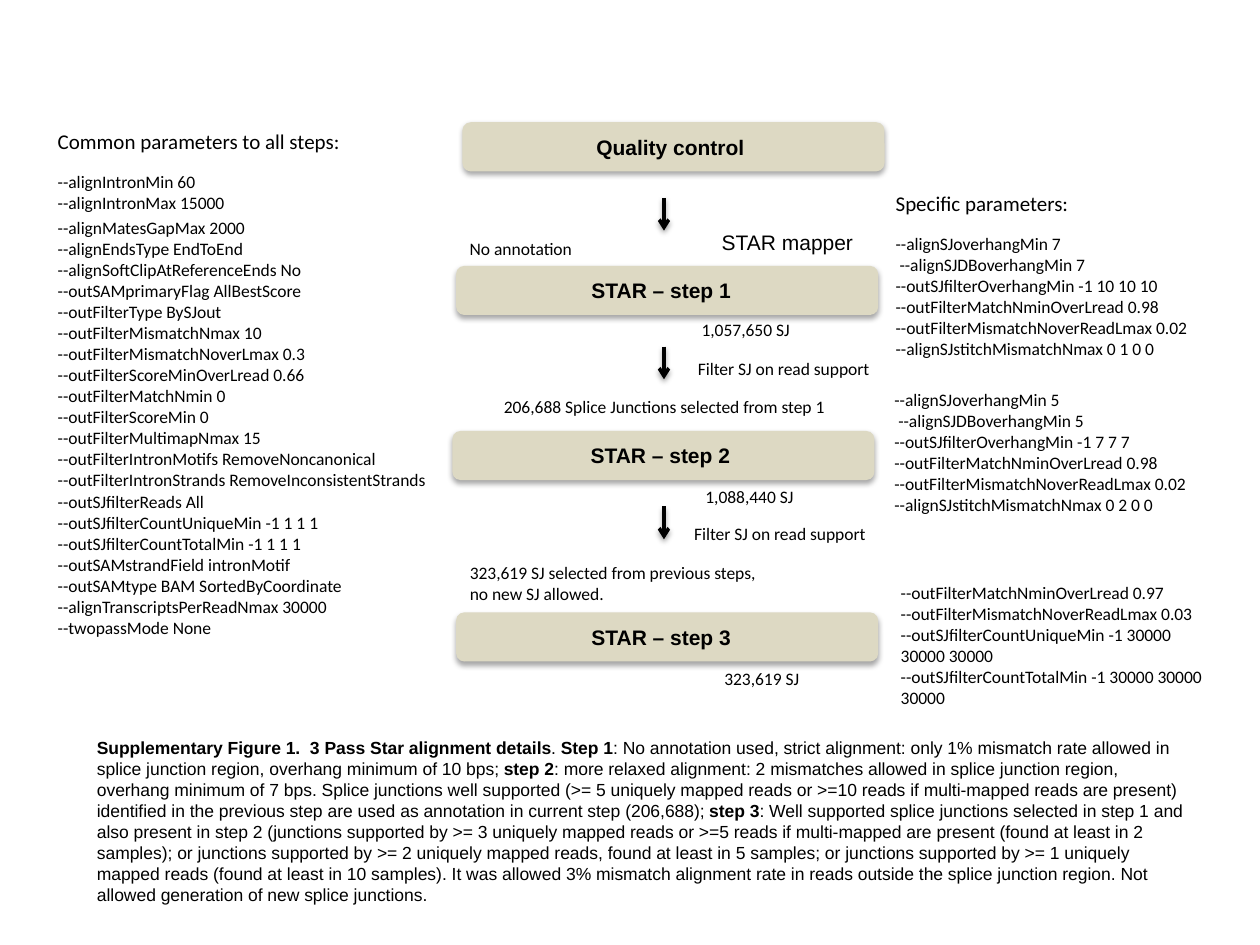
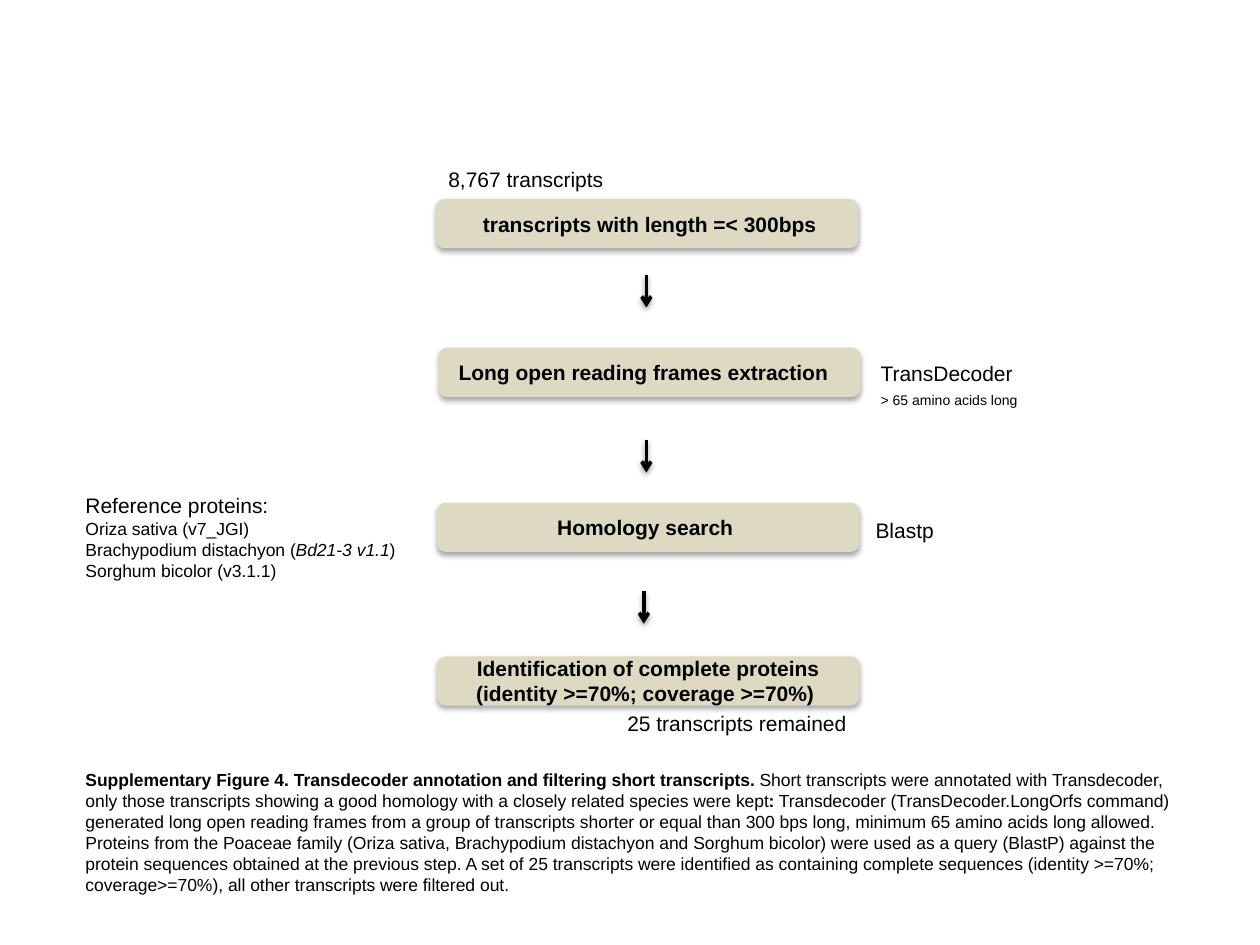
from dataclasses import dataclass, field
from typing import Any

from lxml import etree
from pptx import Presentation
from pptx.dml.color import RGBColor
from pptx.enum.shapes import MSO_CONNECTOR, MSO_SHAPE
from pptx.enum.text import MSO_ANCHOR, MSO_AUTO_SIZE, PP_ALIGN
from pptx.oxml.ns import qn
from pptx.util import Inches, Pt

ROUNDED, STRAIGHT = MSO_SHAPE.ROUNDED_RECTANGLE, MSO_CONNECTOR.STRAIGHT
MIDDLE, CENTER = MSO_ANCHOR.MIDDLE, PP_ALIGN.CENTER
GROW = MSO_AUTO_SIZE.SHAPE_TO_FIT_TEXT

COLORS = {"step": "DDD9C3", "ink": "000000"}
SANS, PARAM_FONT = "Arial", "Calibri"

# Grid of 100 columns by 75 rows, in tenths of an inch
COLUMNS, ROWS, CELL = 100, 75, 0.1
STEP_W, STEP_H, ARROW_H = 33.5, 3.9, 2.6
CAPTION_W = 88.5
SPACE = 3.33  # width of one bold 12 pt space, in points
HEAD_GAP = 9.8  # space between a parameter heading and its list


@dataclass
class Step:
    col: float
    row: float
    text: str
    nudge: float = 0  # shifts the centred text left, in spaces


@dataclass
class Arrow:
    col: float
    row: float


@dataclass
class Label:
    """Text in which *...* is bold and ~...~ is italic."""
    col: float
    row: float
    width: float
    height: float
    text: str
    size: float = 10
    font: str = PARAM_FONT
    head_size: float = 0  # size of the first line, if it differs
    wrap: bool = True
    gaps: dict[int, float] = field(default_factory=dict)  # points above a line


@dataclass
class Figure:
    steps: list[Step]
    arrows: list[Arrow]
    labels: list[Label]


def grid(cells: float) -> int:
    return Inches(round(cells * CELL, 2))


def apply(target: Any, formats: dict[str, Any]) -> None:
    for name, value in formats.items():
        setattr(target, name, value)


def add_runs(paragraph, text: str, size: float, font: str, bold: bool) -> None:
    for i, weighted in enumerate(text.split("*")):
        for j, piece in enumerate(weighted.split("~")):
            if piece:
                run = paragraph.add_run()
                run.text = piece
                apply(run.font, {"size": Pt(size), "name": font,
                                 "bold": bold or i % 2 == 1, "italic": j % 2 == 1})
                run.font.color.rgb = RGBColor.from_string(COLORS["ink"])


def add_lines(frame, text: str, size: float, font: str, bold: bool = False,
              head_size: float = 0, gaps: dict[int, float] | None = None,
              align: Any = None) -> None:
    for index, line in enumerate(text.split("\n")):
        paragraph = frame.add_paragraph() if index else frame.paragraphs[0]
        apply(paragraph, {"alignment": align,
                          "space_before": Pt((gaps or {}).get(index, 0))})
        line_size = head_size if head_size and index == 0 else size
        add_runs(paragraph, line, line_size, font, bold)


def cast_shadow(properties, alpha: int, distance: float) -> None:
    effects = properties.find(qn("a:effectLst"))
    if effects is None:
        effects = etree.SubElement(properties, qn("a:effectLst"))
    shadow = etree.SubElement(effects, qn("a:outerShdw"), blurRad=str(Pt(3.1)),
                              dist=str(Pt(distance)), dir="5400000", rotWithShape="0")
    color = etree.SubElement(shadow, qn("a:srgbClr"), val=COLORS["ink"])
    etree.SubElement(color, qn("a:alpha"), val=str(alpha * 1000))


def draw_step(slide, step: Step) -> None:
    box = slide.shapes.add_shape(ROUNDED, grid(step.col), grid(step.row),
                                 grid(STEP_W), grid(STEP_H))
    box.fill.solid()
    box.fill.fore_color.rgb = RGBColor.from_string(COLORS["step"])
    box.line.fill.background()
    box.shadow.inherit = False
    cast_shadow(box.element.spPr, 35, 1.8)
    apply(box.text_frame, {"word_wrap": True, "vertical_anchor": MIDDLE,
                           "margin_right": Pt(7.2 + step.nudge * SPACE)})
    add_lines(box.text_frame, step.text, 12, SANS, bold=True, align=CENTER)


def draw_arrow(slide, arrow: Arrow) -> None:
    line = slide.shapes.add_connector(STRAIGHT, grid(arrow.col), grid(arrow.row),
                                      grid(arrow.col), grid(arrow.row + ARROW_H))
    line.line.color.rgb = RGBColor.from_string(COLORS["ink"])
    line.line.width = Pt(2)
    properties = line.element.spPr
    etree.SubElement(properties.find(qn("a:ln")), qn("a:tailEnd"), type="arrow")
    cast_shadow(properties, 38, 1.6)


def draw_label(slide, label: Label) -> None:
    box = slide.shapes.add_textbox(grid(label.col), grid(label.row),
                                   grid(label.width), grid(label.height))
    apply(box.text_frame, {"word_wrap": label.wrap, "auto_size": GROW})
    add_lines(box.text_frame, label.text, label.size, label.font,
              head_size=label.head_size, gaps=label.gaps)


def title_label(col: float, row: float, width: float, text: str) -> Label:
    return Label(col, row, width, 3, text, 12, SANS, wrap=False)


def caption(col: float, row: float, height: float, sentences: list[str]) -> Label:
    return Label(col, row, CAPTION_W, height, " ".join(sentences), font=SANS)


def note(col: float, row: float, width: float, text: str) -> Label:
    return Label(col, row, width, 2.7, text)


def junction_parameters(overhang: int, filters: str, stitch: str) -> str:
    return (f"--alignSJoverhangMin {overhang}\n"
            f" --alignSJDBoverhangMin {overhang}\n"
            f"--outSJfilterOverhangMin {filters}\n"
            "--outFilterMatchNminOverLread 0.98\n"
            "--outFilterMismatchNoverReadLmax 0.02\n"
            f"--alignSJstitchMismatchNmax {stitch}")


ALIGN_PARAMETERS = """Common parameters to all steps:
--alignIntronMin 60
--alignIntronMax 15000
--alignMatesGapMax 2000
--alignEndsType EndToEnd
--alignSoftClipAtReferenceEnds No"""

OUTPUT_PARAMETERS = """--outSAMprimaryFlag AllBestScore
--outFilterType BySJout
--outFilterMismatchNmax 10
--outFilterMismatchNoverLmax 0.3
--outFilterScoreMinOverLread 0.66
--outFilterMatchNmin 0
--outFilterScoreMin 0
--outFilterMultimapNmax 15
--outFilterIntronMotifs RemoveNoncanonical
--outFilterIntronStrands RemoveInconsistentStrands
--outSJfilterReads All
--outSJfilterCountUniqueMin -1 1 1 1
--outSJfilterCountTotalMin -1 1 1 1
--outSAMstrandField intronMotif
--outSAMtype BAM SortedByCoordinate
--alignTranscriptsPerReadNmax 30000
--twopassMode None"""

FINAL_PARAMETERS = """--outFilterMatchNminOverLread 0.97
--outFilterMismatchNoverReadLmax 0.03
--outSJfilterCountUniqueMin -1 30000 30000 30000
--outSJfilterCountTotalMin -1 30000 30000 30000"""

ALIGNMENT_CAPTION = [
    "*Supplementary Figure 1.  3 Pass Star alignment details*.",
    "*Step 1*: No annotation used, strict alignment: only 1% mismatch rate allowed in splice "
    "junction region, overhang minimum of 10 bps;",
    "*step 2*: more relaxed alignment: 2 mismatches allowed in splice junction region, "
    "overhang minimum of 7 bps.",
    "Splice junctions well supported (>= 5 uniquely mapped reads or >=10 reads if multi-mapped "
    "reads are present) identified in the previous step are used as annotation in current "
    "step (206,688);",
    "*step 3*: Well supported splice junctions selected in step 1 and also present in step 2 "
    "(junctions supported by >= 3 uniquely mapped reads or >=5 reads if multi-mapped are "
    "present (found at least in 2 samples);",
    "or junctions supported by >= 2 uniquely mapped reads, found at least in 5 samples;",
    "or junctions supported by >= 1 uniquely mapped reads (found at least in 10 samples).",
    "It was allowed 3% mismatch alignment rate in reads outside the splice junction region.",
    "Not allowed generation of new splice junctions.",
]

TRANSCRIPT_CAPTION = [
    "*Supplementary Figure 4. Transdecoder annotation and filtering short transcripts.*",
    "Short transcripts were annotated with Transdecoder, only those transcripts showing a good "
    "homology with a closely related species were kept*:*",
    "Transdecoder (TransDecoder.LongOrfs command) generated long open reading frames from a "
    "group of transcripts shorter or equal than 300 bps long, minimum 65 amino acids long "
    "allowed.",
    "Proteins from the Poaceae family (Oriza sativa, Brachypodium distachyon and Sorghum "
    "bicolor) were used as a query (BlastP) against the protein sequences obtained at the "
    "previous step.",
    "A set of 25 transcripts were identified as containing complete sequences (identity >=70%; "
    "coverage>=70%), all other transcripts were filtered out.",
]

FIGURES = [
    # Three-pass alignment
    Figure(
        steps=[Step(36.7, 9.7, "Quality control", 1),
               Step(36.2, 21.1, "STAR – step 1", 2),
               Step(35.9, 34.2, "STAR – step 2", 1),
               Step(36.2, 48.6, "STAR – step 3", 2)],
        arrows=[Arrow(52.7, row) for row in (15.7, 27.5, 40.2)],
        labels=[
            title_label(56.3, 17.7, 13, "STAR mapper"),
            Label(3.6, 9.7, 33.8, 44.1, "\n".join([ALIGN_PARAMETERS, OUTPUT_PARAMETERS]),
                  head_size=12, gaps={1: HEAD_GAP, 3: 2.4}),
            Label(70.1, 14.6, 25.9, 14.8, "Specific parameters:\n"
                  + junction_parameters(7, "-1 10 10 10", "0 1 0 0"),
                  head_size=12, gaps={1: HEAD_GAP}),
            Label(70, 30.4, 25.9, 11.1, junction_parameters(5, "-1 7 7 7", "0 2 0 0")),
            Label(70.5, 45.7, 25.9, 11.1, FINAL_PARAMETERS),
            note(36.3, 18.4, 14.7, "No annotation"),
            note(54.7, 24.8, 14.7, "1,057,650 SJ"),
            note(54.4, 27.9, 31.5, "Filter SJ on read support"),
            note(39, 30.9, 31.5, "206,688 Splice Junctions selected from step 1"),
            note(55, 38.1, 14.7, "1,088,440 SJ"),
            note(54.1, 41, 31.5, "Filter SJ on read support"),
            Label(36.3, 44.1, 34.1, 4.4,
                  "323,619 SJ selected from previous steps,\nno new SJ allowed."),
            note(56.5, 52.5, 14.7, "323,619 SJ"),
            caption(6.7, 58, 14.5, ALIGNMENT_CAPTION),
        ]),
    # Short transcript filtering
    Figure(
        steps=[Step(34.6, 15.8, "transcripts with length =< 300bps", -1),
               Step(34.8, 27.6, "Long open reading frames extraction", 2),
               Step(34.7, 39.9, "Homology search", 1),
               Step(34.7, 52.1, "Identification of complete proteins\n"
                                "(identity >=70%; coverage >=70%) ")],
        arrows=[Arrow(51.3, 21.8), Arrow(51.3, 34.9), Arrow(51.1, 46.9)],
        labels=[
            title_label(34.6, 12.7, 15.4, "8,767 transcripts"),
            Label(68.9, 28.1, 13.5, 5.1, "TransDecoder\n> 65 amino acids long", 8, SANS,
                  head_size=12, wrap=False, gaps={1: 3.6}),
            title_label(68.5, 40.6, 7.2, "Blastp"),
            Label(5.8, 38.6, 32.9, 8.1,
                  "Reference proteins:\nOriza sativa (v7_JGI)\n"
                  "Brachypodium distachyon (~Bd21-3 v1.1~)\nSorghum bicolor (v3.1.1)",
                  font=SANS, head_size=12),
            title_label(48.8, 55.9, 20.5, "25 transcripts remained"),
            caption(5.8, 60.5, 11.1, TRANSCRIPT_CAPTION),
        ]),
]


def main() -> None:
    deck = Presentation()
    apply(deck, {"slide_width": grid(COLUMNS), "slide_height": grid(ROWS)})
    for figure in FIGURES:
        slide = deck.slides.add_slide(deck.slide_layouts[6])
        for step in figure.steps:
            draw_step(slide, step)
        for arrow in figure.arrows:
            draw_arrow(slide, arrow)
        for label in figure.labels:
            draw_label(slide, label)
    deck.save("out.pptx")


if __name__ == "__main__":
    main()
